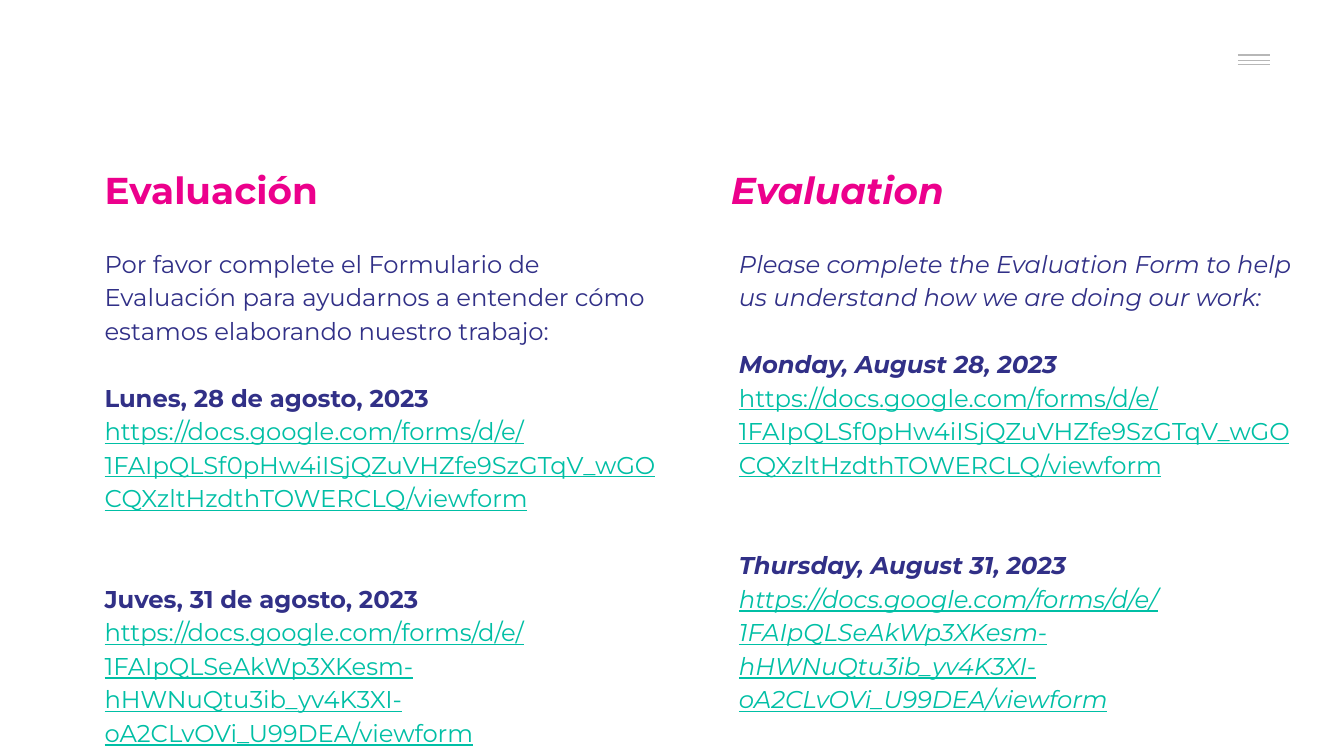
import pptx
import pptx.util
import pptx.dml.color
import pptx.enum.shapes
import pptx.enum.text
import pptx.oxml.ns
import lxml.etree

Inches = pptx.util.Inches
Pt = pptx.util.Pt


def color(target, code):
    target.rgb = pptx.dml.color.RGBColor.from_string(code)


def write(para, text, code, form):
    """Add a run to the paragraph, with font values from a dict."""
    run = para.add_run()
    run.text = text
    for key, value in {"name": "Montserrat", **form}.items():
        setattr(run.font, key, value)
    color(run.font.color, code)


PINK, NAVY, TEAL = "EC008C", "313087", "00BFA5"
GRAY, WHITE = "B7B7B7", "FFFFFF"
BASE = "https://docs.google.com/forms/d/e/"
LINKS = [
    BASE + "1FAIpQLSf0pHw4iISjQZuVHZfe9SzGTqV_wGOCQXzltHzdthTOWERCLQ/viewform",
    BASE + "1FAIpQLSeAkWp3XKesm-hHWNuQtu3ib_yv4K3XI-oA2CLvOVi_U99DEA/viewform",
]
BOX = {"word_wrap": True, "vertical_anchor": pptx.enum.text.MSO_ANCHOR.TOP}
BOX.update({"margin_" + side: Inches(0.1)
            for side in ("left", "top", "right", "bottom")})

# Widescreen, 16 to 9
deck = pptx.Presentation()
deck.slide_width = Inches(10)
deck.slide_height = Inches(10) * 9 // 16
slide = deck.slides.add_slide(deck.slide_layouts[6])
shapes = slide.shapes

# Menu mark
patch = shapes.add_shape(pptx.enum.shapes.MSO_SHAPE.RECTANGLE,
                         Inches(8.86), Inches(0.17), Inches(0.94), Inches(0.5))
patch.shadow.inherit = False
patch.fill.solid()
color(patch.fill.fore_color, WHITE)
patch.line.fill.background()
for y in (0.41, 0.45, 0.48):
    bar = shapes.add_connector(pptx.enum.shapes.MSO_CONNECTOR.STRAIGHT,
                               Inches(9.21), Inches(y), Inches(9.45), Inches(y))
    color(bar.line.color, GRAY)
    bar.line.width = Pt(0.75)
    lxml.etree.SubElement(bar._element.spPr, pptx.oxml.ns.qn("a:effectLst"))

# Title left; body left, width, height; slant; title; intro; dates; link slants
columns = [
    (0.68, (0.68, 4.38, 2.12), False, "Evaluación",
     "Por favor complete el Formulario de Evaluación para ayudarnos a "
     "entender cómo estamos elaborando nuestro trabajo:",
     ("Lunes, 28 de agosto, 2023", "Juves, 31 de agosto, 2023"),
     (False, False)),
    (5.34, (5.4, 4.33, 3.01), True, "Evaluation",
     "Please complete the Evaluation Form to help us understand how we are "
     "doing our work:",
     ("Monday, August 28, 2023", "Thursday, August 31, 2023"),
     (False, True)),
]
for left, (x, width, height), slant, title, intro, dates, slants in columns:
    head = shapes.add_textbox(Inches(left), Inches(1.14),
                              Inches(4.22), Inches(0.59))
    head.fill.solid()
    color(head.fill.fore_color, WHITE)
    body = shapes.add_textbox(Inches(x), Inches(1.72),
                              Inches(width), Inches(height))
    for box in (head, body):
        for key, value in BOX.items():
            setattr(box.text_frame, key, value)

    write(head.text_frame.paragraphs[0], title, PINK,
          {"size": Pt(20), "bold": True, "italic": slant})

    # Each row: gap above, text, color, font values
    rows = [(0, intro, NAVY, {"italic": slant})]
    for gap, date, link, tilt in zip((18, 36), dates, LINKS, slants):
        rows.append((gap, date, NAVY, {"bold": True, "italic": slant}))
        rows.append((0, link, TEAL, {"underline": True, "italic": tilt}))
    frame = body.text_frame
    for spot, (gap, text, code, form) in enumerate(rows):
        para = frame.add_paragraph() if spot else frame.paragraphs[0]
        para.line_spacing = 1.15
        para.space_before = Pt(gap)
        write(para, text, code, {"size": Pt(13), **form})

deck.save("out.pptx")
